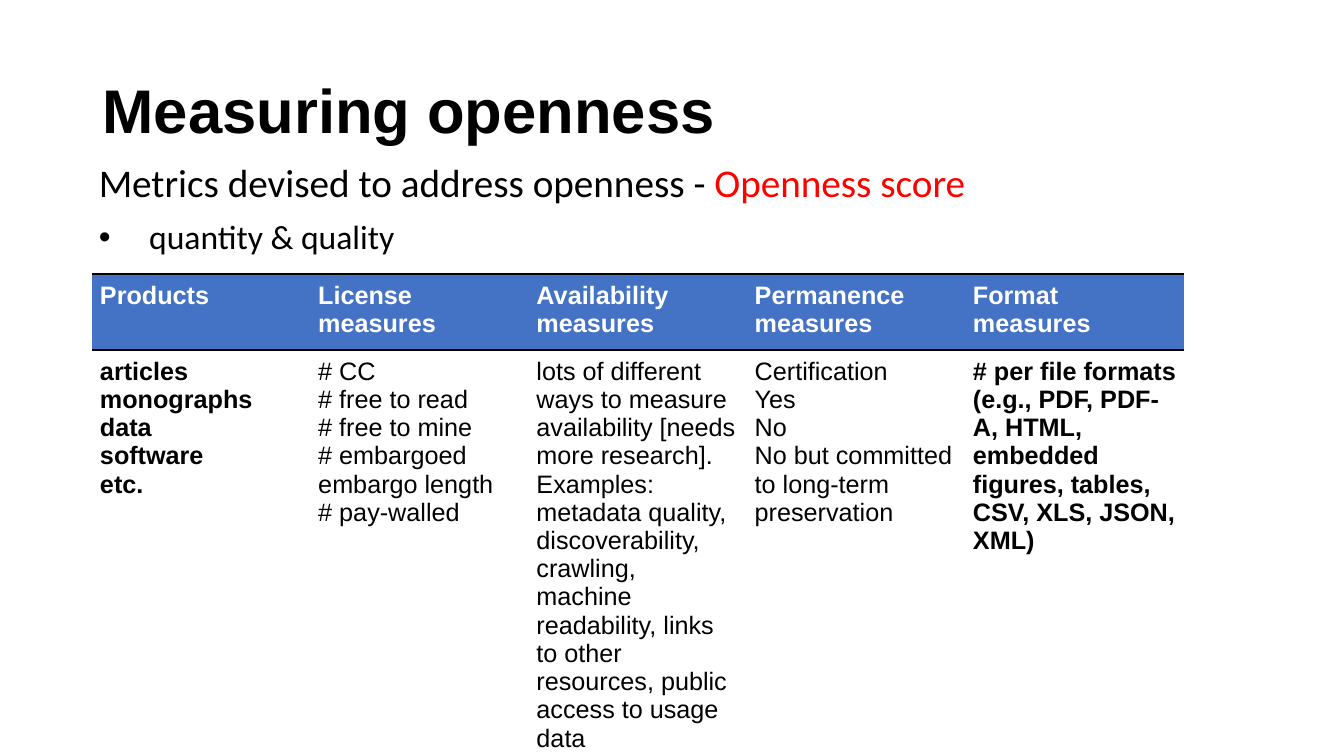
import pptx
import pptx.dml.color
import pptx.enum.text
import pptx.oxml
import pptx.oxml.ns
import pptx.util
from dataclasses import dataclass
from pptx.util import Cm


@dataclass(frozen=True)
class Theme:
    black: str = "000000"
    white: str = "FFFFFF"
    red: str = "FF0000"
    blue: str = "4472C4"
    heading_font: str = "Arial"
    body_font: str = "Calibri"
    title_size: int = 44
    lead_size: int = 28
    bullet_size: int = 24
    table_size: int = 18
    rule_width: int = 2


theme = Theme()
namespace = pptx.oxml.ns.nsdecls("a")


def format_run(run, font, size, color, bold=False):
    run.font.name = font
    run.font.size = pptx.util.Pt(size)
    run.font.bold = bold
    run.font.color.rgb = pptx.dml.color.RGBColor.from_string(color)


def add_rules(cell, sides):
    properties = cell._tc.get_or_add_tcPr()
    for position, side in enumerate(sides):
        properties.insert(position, pptx.oxml.parse_xml(
            f'<a:ln{side} {namespace} w="{pptx.util.Pt(theme.rule_width)}">'
            f'<a:solidFill><a:srgbClr val="{theme.black}"/></a:solidFill></a:ln{side}>'))


presentation = pptx.Presentation()
presentation.slide_width = Cm(33.87)
presentation.slide_height = Cm(19.05)
slide = presentation.slides.add_slide(presentation.slide_layouts[5])

# Title
title = slide.shapes.title
title.left, title.top, title.width, title.height = Cm(2.33), Cm(1.01), Cm(29.21), Cm(3.68)
title.text_frame.text = "Measuring openness"
title.text_frame.auto_size = pptx.enum.text.MSO_AUTO_SIZE.NONE
title.text_frame.vertical_anchor = pptx.enum.text.MSO_ANCHOR.MIDDLE
paragraph = title.text_frame.paragraphs[0]
paragraph.alignment = pptx.enum.text.PP_ALIGN.LEFT
paragraph.line_spacing = 0.9
format_run(paragraph.runs[0], theme.heading_font, theme.title_size, theme.black, bold=True)

# Lead line and bullet
introduction = slide.shapes.add_textbox(Cm(2.24), Cm(4.01), Cm(29.21), Cm(3.38))
introduction.text_frame.word_wrap = True
lead = introduction.text_frame.paragraphs[0]
lead.line_spacing = 0.9
for text, color in [("Metrics devised to address openness - ", theme.black),
                    ("Openness score", theme.red)]:
    run = lead.add_run()
    run.text = text
    format_run(run, theme.body_font, theme.lead_size, color)

bullet = introduction.text_frame.add_paragraph()
bullet.text = "quantity & quality"
bullet.line_spacing = 0.9
bullet.space_before = pptx.util.Pt(10)
format_run(bullet.runs[0], theme.body_font, theme.bullet_size, theme.black)
bullet_properties = bullet._p.get_or_add_pPr()
bullet_properties.set("marL", str(Cm(1.27)))
bullet_properties.set("indent", str(-Cm(1.27)))
bullet_properties.append(pptx.oxml.parse_xml(f'<a:buFont {namespace} typeface="Arial"/>'))
bullet_properties.append(pptx.oxml.parse_xml(f'<a:buChar {namespace} char="•"/>'))

# Table of measures: heading, body paragraphs, bold body
columns = [
    ("Products", ["articles", "monographs", "data", "software", "etc."], True),
    ("License measures", ["# CC", "# free to read", "# free to mine",
                          "# embargoed embargo length", "# pay-walled"], False),
    ("Availability measures", [
        "lots of different ways to measure availability [needs more research]. Examples:",
        "metadata quality,", "discoverability,", "crawling,",
        "machine readability, links to other resources, public access to usage data"], False),
    ("Permanence measures", ["Certification", "Yes", "No",
                             "No but committed to long-term preservation"], False),
    ("Format measures", ["# per file formats (e.g., PDF, PDF-A, HTML, embedded figures, "
                         "tables, CSV, XLS, JSON, XML)"], True),
]
table = slide.shapes.add_table(2, len(columns), Cm(2.33), Cm(6.91), Cm(27.5), Cm(12.1)).table
table.rows[0].height, table.rows[1].height = Cm(1.8), Cm(10.3)
# Built-in style without fills or grid lines
table._tbl.tblPr.find(pptx.oxml.ns.qn("a:tableStyleId")).text = "{2D5ABB26-0587-4C30-8999-92F81FD0307C}"

for column, (heading, lines, bold_body) in enumerate(columns):
    rows = [([heading], theme.blue, theme.white, True, "TB"),
            (lines, theme.white, theme.black, bold_body, "TB")]
    for row, (texts, fill, color, bold, rules) in enumerate(rows):
        cell = table.cell(row, column)
        cell.margin_left = cell.margin_right = Cm(0.19)
        cell.margin_top = cell.margin_bottom = Cm(0.19)
        cell.fill.solid()
        cell.fill.fore_color.rgb = pptx.dml.color.RGBColor.from_string(fill)
        add_rules(cell, rules)
        cell.text_frame.text = "\n".join(texts)
        for paragraph in cell.text_frame.paragraphs:
            format_run(paragraph.runs[0], theme.heading_font, theme.table_size, color, bold)

presentation.save("out.pptx")
